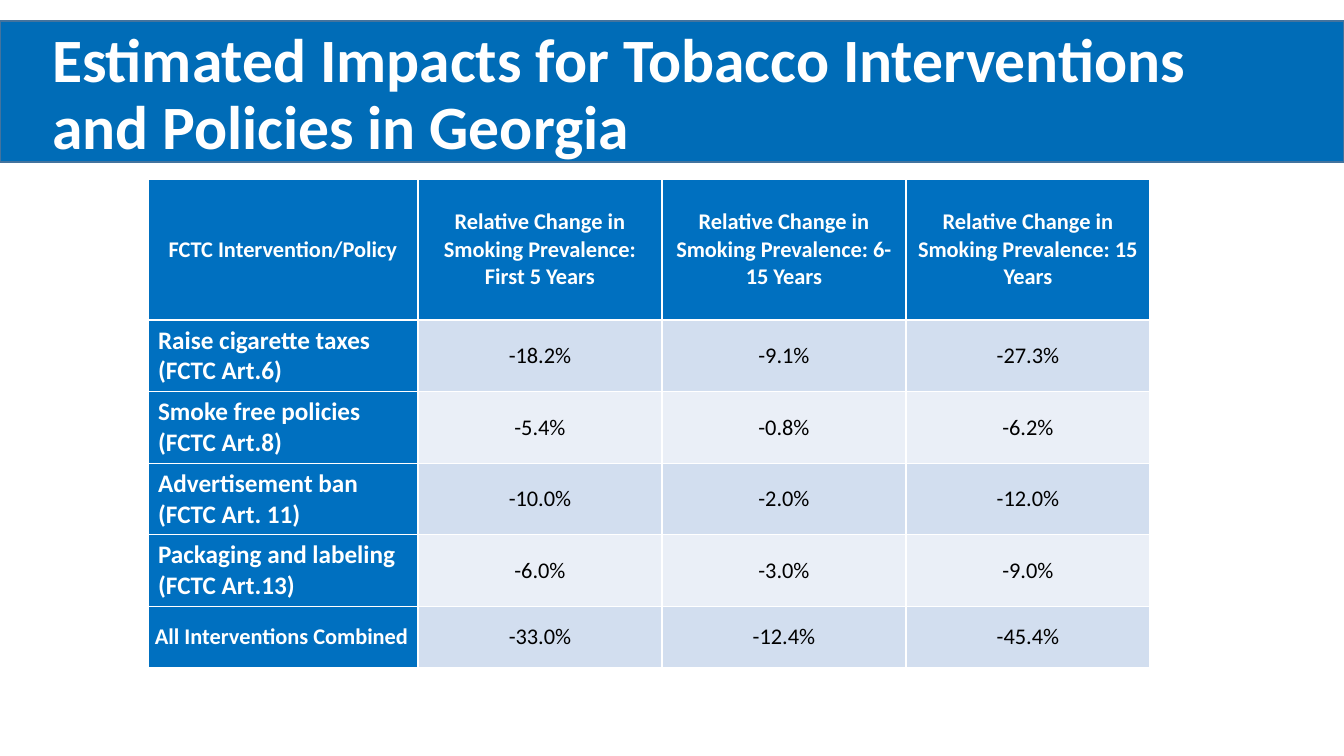
"""Build a slide with a table of tobacco policy impacts in Georgia."""
from pptx import Presentation
from pptx.dml.color import RGBColor
from pptx.enum.shapes import MSO_SHAPE
from pptx.enum.text import MSO_ANCHOR, MSO_AUTO_SIZE, PP_ALIGN
from pptx.util import Emu, Pt

RECT = MSO_SHAPE.RECTANGLE
MIDDLE, TOP = MSO_ANCHOR.MIDDLE, MSO_ANCHOR.TOP
LEFT, CENTER = PP_ALIGN.LEFT, PP_ALIGN.CENTER
NO_FIT = MSO_AUTO_SIZE.NONE

WHITE = RGBColor(0xFF, 0xFF, 0xFF)
BLACK = RGBColor(0x00, 0x00, 0x00)
BAND_BLUE = RGBColor(0x00, 0x6C, 0xB7)
BAND_EDGE = RGBColor(0x43, 0x73, 0x9E)
HEAD_BLUE = RGBColor(0x00, 0x70, 0xC0)
STRIPES = (RGBColor(0xEA, 0xEF, 0xF7), RGBColor(0xD2, 0xDE, 0xEF))

FONT = "Calibri"
COL_WIDTHS = (270, 244, 244, 244)
ROW_HEIGHTS = (141, 70, 70, 70, 70, 61)
ROWS = (
    ("FCTC Intervention/Policy",
     "Relative Change in Smoking Prevalence: First 5 Years",
     "Relative Change in Smoking Prevalence: 6-15 Years",
     "Relative Change in Smoking Prevalence: 15 Years"),
    ("Raise cigarette taxes (FCTC Art.6)", "-18.2%", "-9.1%", "-27.3%"),
    ("Smoke free policies (FCTC Art.8)", "-5.4%", "-0.8%", "-6.2%"),
    ("Advertisement ban (FCTC Art. 11)", "-10.0%", "-2.0%", "-12.0%"),
    ("Packaging and labeling (FCTC Art.13)", "-6.0%", "-3.0%", "-9.0%"),
    ("All Interventions Combined", "-33.0%", "-12.4%", "-45.4%"),
)


def px(n):
    """Turn pixels into EMU."""
    return Emu(round(n * 914400 / 100.8))


def format_text(p, size, color, bold, align):
    """Format a paragraph and its runs."""
    p.alignment = align
    for r in p.runs:
        r.font.name = FONT
        r.font.size = Pt(size)
        r.font.bold = bold
        r.font.color.rgb = color


def add_band(slide):
    """Add the blue band behind the title."""
    sp = slide.shapes.add_shape(RECT, 0, px(21), px(1344), px(141))
    sp.shadow.inherit = False
    sp.fill.solid()
    sp.fill.fore_color.rgb = BAND_BLUE
    sp.line.color.rgb = BAND_EDGE
    sp.line.width = Pt(1)
    slide.shapes.title.element.addprevious(sp.element)


def set_title(slide, text):
    """Place and format the title."""
    sp = slide.shapes.title
    sp.left, sp.top, sp.width, sp.height = px(42), px(23), px(1159), px(146)
    tf = sp.text_frame
    tf.text = text
    tf.word_wrap = True
    tf.auto_size = NO_FIT
    tf.vertical_anchor = MIDDLE
    p = tf.paragraphs[0]
    p.line_spacing = 0.9
    format_text(p, 44, WHITE, True, LEFT)


def fill_cell(cell, text, row, col):
    """Write one cell and format it by its place in the table."""
    is_policy = col == 0 and 0 < row < len(ROWS) - 1
    is_head = row == 0 or col == 0
    cell.text = text
    cell.fill.solid()
    cell.fill.fore_color.rgb = HEAD_BLUE if is_head else STRIPES[row % 2]
    cell.vertical_anchor = TOP if is_policy else MIDDLE
    if not is_policy:
        cell.margin_left = cell.margin_right = px(7)
        cell.margin_top = cell.margin_bottom = 0
    format_text(cell.text_frame.paragraphs[0], 18 if is_policy else 16,
                WHITE if is_head else BLACK, is_head,
                LEFT if col == 0 and row > 0 else CENTER)


def add_impact_table(slide):
    """Add the table of relative changes."""
    table = slide.shapes.add_table(
        len(ROWS), len(COL_WIDTHS), px(148), px(179),
        px(sum(COL_WIDTHS)), px(sum(ROW_HEIGHTS))).table
    table.first_col = True
    for column, width in zip(table.columns, COL_WIDTHS):
        column.width = px(width)
    for row, height in zip(table.rows, ROW_HEIGHTS):
        row.height = px(height)
    for i, texts in enumerate(ROWS):
        for j, text in enumerate(texts):
            fill_cell(table.cell(i, j), text, i, j)


def main():
    """Build and save the slide."""
    prs = Presentation()
    prs.slide_width, prs.slide_height = px(1344), px(756)
    slide = prs.slides.add_slide(prs.slide_layouts[5])
    add_band(slide)
    set_title(slide, "Estimated Impacts for Tobacco Interventions "
                     "and Policies in Georgia")
    add_impact_table(slide)
    prs.save("out.pptx")


if __name__ == "__main__":
    main()
